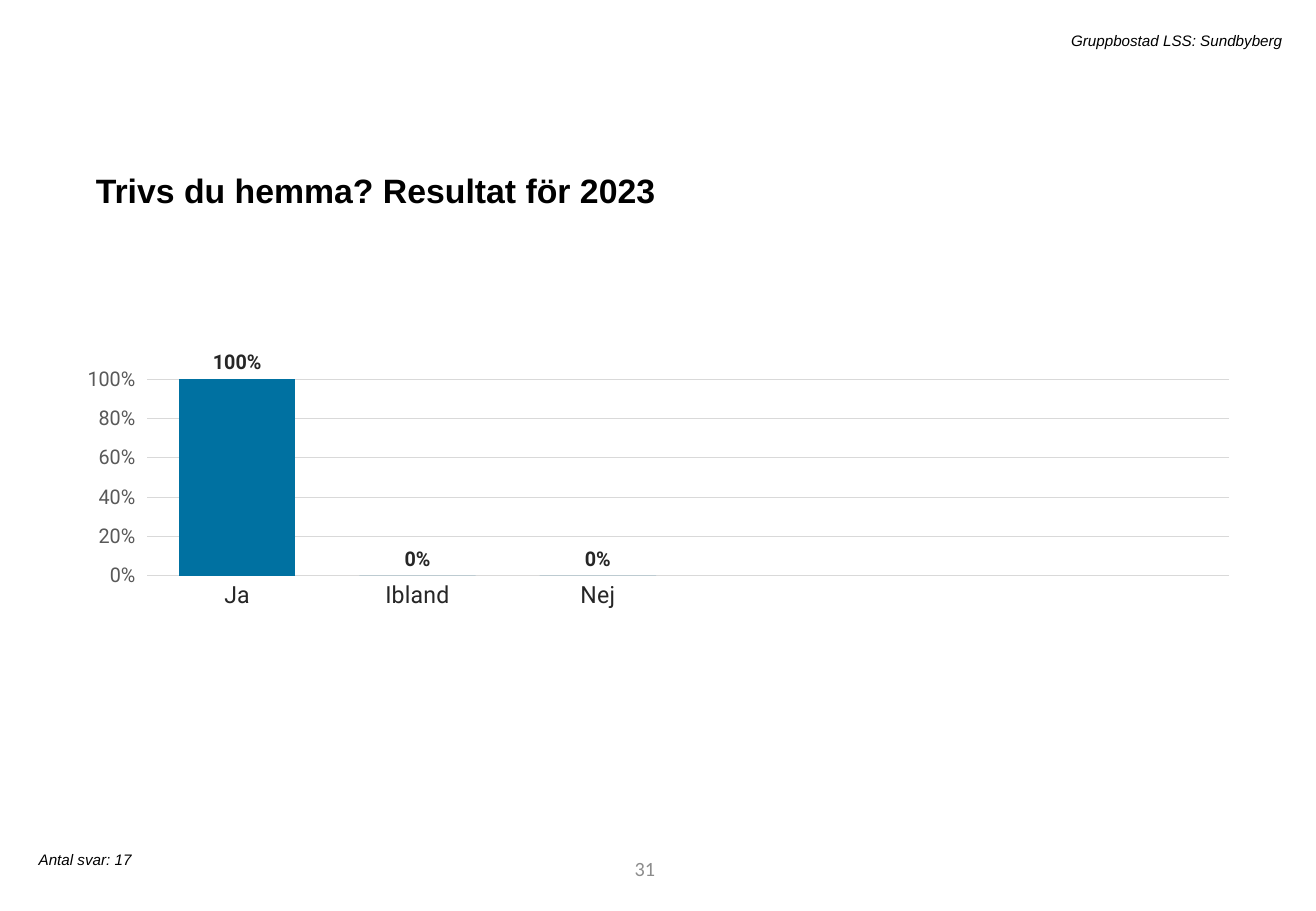
from lxml import etree
from pptx import Presentation
from pptx.chart.data import CategoryChartData
from pptx.dml.color import RGBColor
from pptx.enum.chart import XL_CHART_TYPE, XL_LABEL_POSITION, XL_TICK_MARK
from pptx.enum.text import MSO_ANCHOR, MSO_AUTO_SIZE, PP_ALIGN
from pptx.oxml.ns import qn
from pptx.util import Emu, Pt

PX = 9144
COLORS = {
    "text": "000000",
    "number": "8C8C8C",
    "bar": "0071A1",
    "grid": "D9D9D9",
    "label": "262626",
    "scale": "595959",
}


class ResultSlide:
    def __init__(self, prs):
        self.s = prs.slides.add_slide(prs.slide_layouts[6])

    def color(self, name):
        return RGBColor.from_string(COLORS[name])

    def box(self, *px):
        return [Emu(v * PX) for v in px]

    def style(self, font, size, color, name="Arial", bold=False, italic=False):
        font.name = name
        font.size = Pt(size)
        font.bold = bold
        font.italic = italic
        font.color.rgb = self.color(color)

    def line(self, fmt):
        fmt.color.rgb = self.color("grid")
        fmt.width = Pt(0.75)

    def text(self, box, text, size, color="text", align=PP_ALIGN.LEFT,
             anchor=MSO_ANCHOR.TOP, wrap=True, grow=True, **font):
        tf = self.s.shapes.add_textbox(*self.box(*box)).text_frame
        tf.word_wrap = wrap
        tf.vertical_anchor = anchor
        tf.auto_size = MSO_AUTO_SIZE.SHAPE_TO_FIT_TEXT if grow else MSO_AUTO_SIZE.NONE
        p = tf.paragraphs[0]
        p.alignment = align
        r = p.add_run()
        r.text = text
        self.style(r.font, size, color, **font)
        return p

    def plot_layout(self, chart, **fractions):
        area = chart.element.find(".//" + qn("c:plotArea"))
        for old in area.findall(qn("c:layout")):
            area.remove(old)
        layout = etree.Element(qn("c:layout"))
        area.insert(0, layout)
        manual = etree.SubElement(layout, qn("c:manualLayout"))
        values = {"layoutTarget": "inner", "xMode": "edge", "yMode": "edge", **fractions}
        for tag, value in values.items():
            etree.SubElement(manual, qn("c:" + tag)).set("val", str(value))

    def column_chart(self, box, cats, vals):
        data = CategoryChartData(number_format="0%")
        data.categories = cats
        data.add_series("Series 1", vals)
        chart = self.s.shapes.add_chart(
            XL_CHART_TYPE.COLUMN_CLUSTERED, *self.box(*box), data).chart
        chart.has_title = False
        chart.has_legend = False
        self.style(chart.font, 10, "text", "Roboto")
        self.plot_layout(chart, x=0.03, y=0.15, w=0.97, h=0.41)

        axis = chart.category_axis
        axis.major_tick_mark = XL_TICK_MARK.NONE
        self.line(axis.format.line)
        self.style(axis.tick_labels.font, 14, "label", "Roboto")

        axis = chart.value_axis
        axis.minimum_scale = 0
        axis.maximum_scale = 1
        axis.major_unit = 0.2
        axis.major_tick_mark = XL_TICK_MARK.OUTSIDE
        axis.format.line.fill.background()
        self.line(axis.major_gridlines.format.line)
        axis.tick_labels.number_format = "0%"
        axis.tick_labels.number_format_is_linked = False
        self.style(axis.tick_labels.font, 12, "scale", "Roboto")

        plot = chart.plots[0]
        plot.gap_width = 55
        plot.vary_by_categories = False
        series = plot.series[0]
        series.format.fill.solid()
        series.format.fill.fore_color.rgb = self.color("bar")
        labels = series.data_labels
        labels.show_value = True
        labels.position = XL_LABEL_POSITION.OUTSIDE_END
        labels.number_format = "0%"
        labels.number_format_is_linked = False
        self.style(labels.font, 12, "label", "Roboto", bold=True)


def main():
    prs = Presentation()
    prs.slide_width = Emu(1083 * PX)
    prs.slide_height = Emu(750 * PX)
    slide = ResultSlide(prs)
    slide.text((305, 695, 244, 40), "31", 12, "number", PP_ALIGN.RIGHT,
               MSO_ANCHOR.MIDDLE, grow=False, name="Calibri")
    p = slide.text((69, 128, 940, 47), "Trivs du hemma? Resultat för 2023", 20, bold=True)
    p.line_spacing = 1.2
    p.space_before = Pt(10)
    slide.column_chart((72, 253, 940, 395),
                       ["Ja", "Ibland", "Nej", "", "", ""],
                       [1, 0, 0, None, None, None])
    slide.text((22, 695, 284, 25), "Antal svar: 17", 9, wrap=False, italic=True)
    slide.text((179, 21, 886, 25), "Gruppbostad LSS: Sundbyberg", 9,
               align=PP_ALIGN.RIGHT, italic=True)
    prs.save("out.pptx")


if __name__ == "__main__":
    main()
